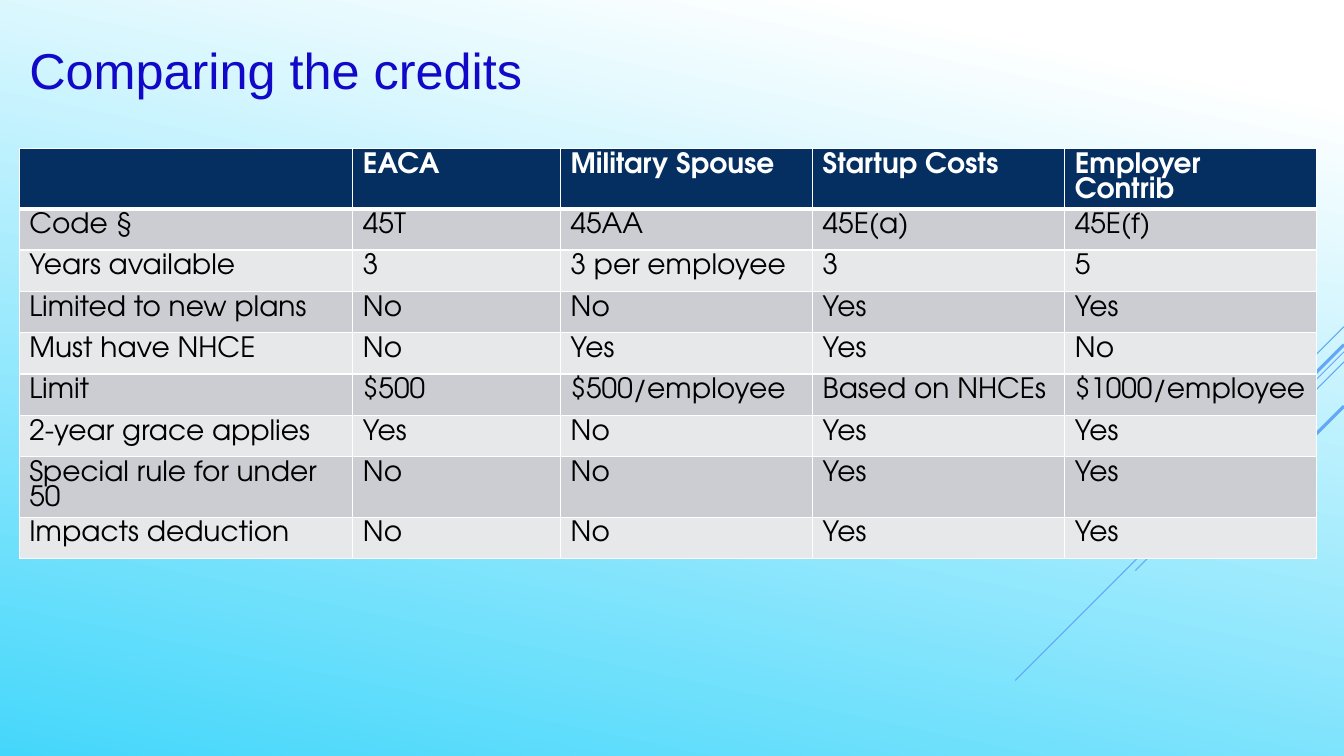
from pptx import Presentation
from pptx.dml.color import RGBColor
from pptx.enum.shapes import MSO_CONNECTOR
from pptx.enum.text import MSO_ANCHOR, PP_ALIGN
from pptx.oxml.ns import qn
from pptx.util import Inches, Pt
from lxml import etree

STRAIGHT = MSO_CONNECTOR.STRAIGHT
MIDDLE = MSO_ANCHOR.MIDDLE
LEFT = PP_ALIGN.LEFT

WHITE = "FFFFFF"
NAVY = "052F61"
BANDS = ["CCCDD2", "E7E8EA"]
WIDTHS = [3.31, 2.06, 2.5, 2.5, 2.5]
ROW_HIGH = 0.41
ROWS = [
    ["", "EACA", "Military Spouse", "Startup Costs", "Employer Contrib"],
    ["Code §", "45T", "45AA", "45E(a)", "45E(f)"],
    ["Years available", "3", "3 per employee", "3", "5"],
    ["Limited to new plans", "No", "No", "Yes", "Yes"],
    ["Must have NHCE", "No", "Yes", "Yes", "No"],
    ["Limit", "$500", "$500/employee", "Based on NHCEs", "$1000/employee"],
    ["2-year grace applies", "Yes", "No", "Yes", "Yes"],
    ["Special rule for under 50", "No", "No", "Yes", "Yes"],
    ["Impacts deduction", "No", "No", "Yes", "Yes"],
]
EDGE = 13.33
RAYS = [
    (3.24, 1, 0.75),
    (3.49, 3.26, 0.75),
    (3.59, 2.07, 0.75),
    (3.42, 1.91, 2.25),
    (4.03, 1.39, 2.25),
]


def color(code):
    """Turn a hex string into a colour."""
    return RGBColor.from_string(code)


def style(font, name, size, code, bold=False):
    """Set the face, size, colour and weight of a font."""
    font.name = name
    font.size = Pt(size)
    font.bold = bold
    font.color.rgb = color(code)


def paint_back(slide):
    """Fill the background with a slanted white to cyan blend."""
    fill = slide.background.fill
    fill.gradient()
    fill.gradient_angle = 258
    for stop, (place, code) in zip(fill.gradient_stops, [(0.1, WHITE), (1, "45D7FB")]):
        stop.position = place
        stop.color.rgb = color(code)


def add_ray(slide, top, reach, width):
    """Draw a diagonal line down and left from the right edge."""
    ray = slide.shapes.add_connector(
        STRAIGHT, Inches(EDGE), Inches(top), Inches(EDGE - reach), Inches(top + reach)
    )
    ray.line.color.rgb = color("64A7F7")
    ray.line.width = Pt(width)
    etree.SubElement(ray._element.spPr, qn("a:effectLst"))


def set_title(slide, text):
    """Place and format the title."""
    title = slide.shapes.title
    title.left, title.top = Inches(0.19), Inches(0.01)
    title.width, title.height = Inches(11.64), Inches(1.35)
    frame = title.text_frame
    frame.text = text
    frame.vertical_anchor = MIDDLE
    para = frame.paragraphs[0]
    para.alignment = LEFT
    style(para.runs[0].font, "Arial", 36, "1108C8")


def add_edge(cell, side, width):
    """Add one white border to a cell."""
    line = etree.Element(qn("a:" + side), w=str(Pt(width)))
    fill = etree.SubElement(line, qn("a:solidFill"))
    etree.SubElement(fill, qn("a:srgbClr"), val=WHITE)
    return line


def fill_cell(cell, text, row):
    """Write and format one table cell."""
    head = row == 0
    props = cell._tc.get_or_add_tcPr()
    for side in ["lnL", "lnR", "lnT", "lnB"]:
        thick = (head and side == "lnB") or (row == 1 and side == "lnT")
        props.append(add_edge(cell, side, 3 if thick else 1))
    cell.fill.solid()
    cell.fill.fore_color.rgb = color(NAVY if head else BANDS[(row - 1) % 2])
    cell.text_frame.text = text
    para = cell.text_frame.paragraphs[0]
    para.line_spacing = Pt(18)
    for run in para.runs:
        style(run.font, "TeX Gyre Adventor", 20, WHITE if head else "000000", head)


def add_grid(slide):
    """Build the table of credits."""
    table = slide.shapes.add_table(
        len(ROWS), len(WIDTHS), Inches(0.19), Inches(1.47),
        Inches(sum(WIDTHS)), Inches(ROW_HIGH * len(ROWS)),
    ).table
    for col, width in zip(table.columns, WIDTHS):
        col.width = Inches(width)
    for row, texts in enumerate(ROWS):
        table.rows[row].height = Inches(ROW_HIGH)
        for col, text in enumerate(texts):
            fill_cell(table.cell(row, col), text, row)


def main():
    """Build and save the slide."""
    deck = Presentation()
    deck.slide_width, deck.slide_height = Inches(EDGE), Inches(7.5)
    slide = deck.slides.add_slide(deck.slide_layouts[5])
    paint_back(slide)
    for ray in RAYS:
        add_ray(slide, *ray)
    set_title(slide, "Comparing the credits")
    add_grid(slide)
    deck.save("out.pptx")


if __name__ == "__main__":
    main()
